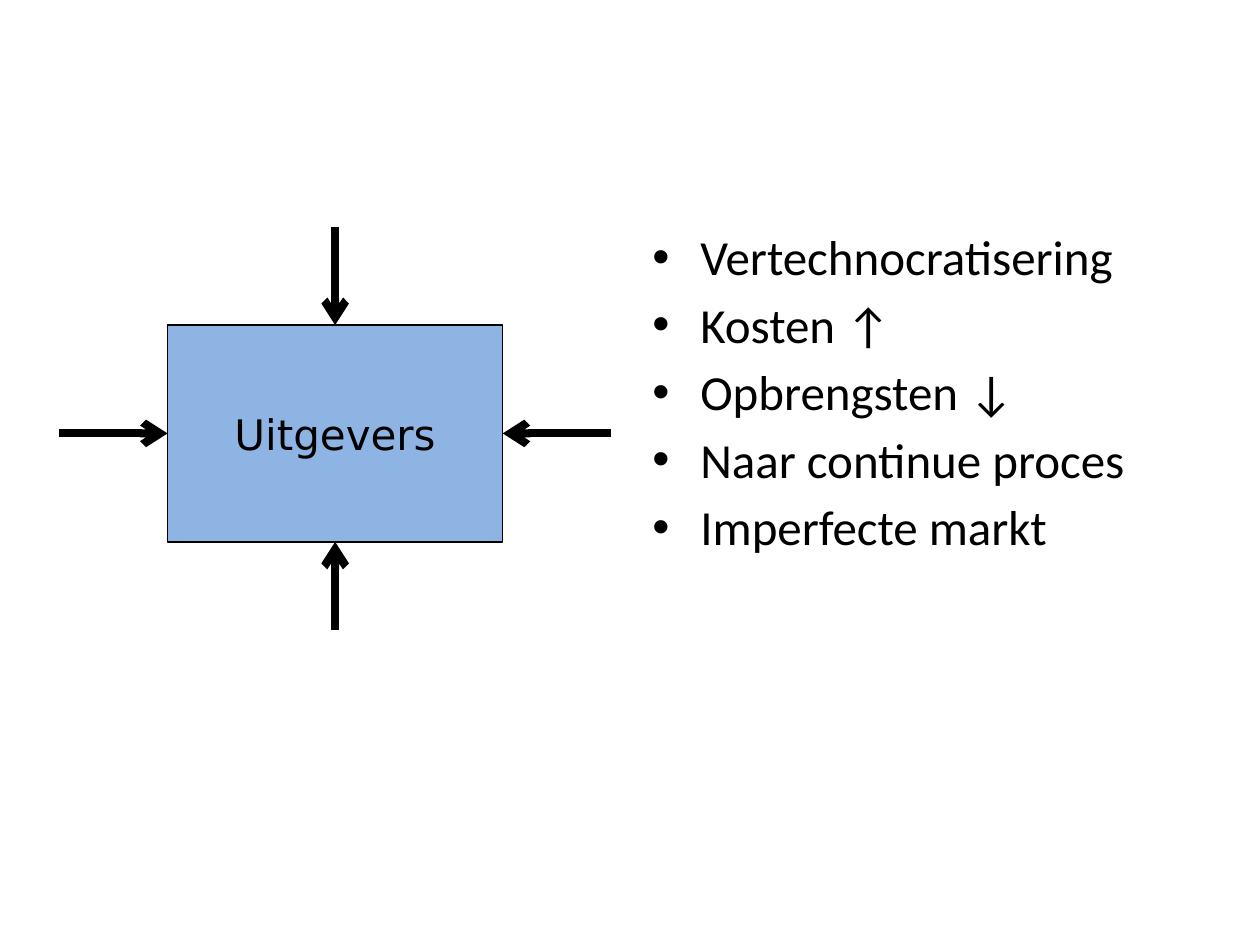
from lxml.etree import SubElement
from pptx import Presentation
from pptx.dml.color import RGBColor
from pptx.enum.shapes import MSO_CONNECTOR, MSO_SHAPE
from pptx.enum.text import MSO_ANCHOR, PP_ALIGN
from pptx.oxml.ns import qn
from pptx.util import Inches, Pt

COLORS = {"text": "000000", "line": "000000", "box": "8EB4E3"}
TRENDS = [
    "Vertechnocratisering",
    "Kosten ↑",
    "Opbrengsten ↓",
    "Naar continue proces",
    "Imperfecte markt",
]


def color(name):
    return RGBColor.from_string(COLORS[name])


def add_text(paragraph, text, font_name, size):
    run = paragraph.add_run()
    run.text = text
    run.font.name = font_name
    run.font.size = Pt(size)
    run.font.color.rgb = color("text")


def add_arrow(slide, start_x, start_y, target, site):
    """Draw an arrow from a point to a connection site of the target."""
    arrow = slide.shapes.add_connector(
        MSO_CONNECTOR.STRAIGHT, start_x, start_y, start_x, start_y)
    arrow.end_connect(target, site)
    arrow.line.color.rgb = color("line")
    arrow.line.width = Pt(4.5)
    line = arrow.line._get_or_add_ln()
    SubElement(line, qn("a:tailEnd"), type="arrow")
    SubElement(arrow._element.spPr, qn("a:effectLst"))


def add_pressure_diagram(slide, left, top, width, height):
    """Place the publishers box with an arrow pressing on each side."""
    box = slide.shapes.add_shape(MSO_SHAPE.RECTANGLE, left, top, width, height)
    box.shadow.inherit = False
    box.fill.solid()
    box.fill.fore_color.rgb = color("box")
    box.line.color.rgb = color("line")
    box.line.width = Pt(1)
    box.text_frame.vertical_anchor = MSO_ANCHOR.MIDDLE
    paragraph = box.text_frame.paragraphs[0]
    paragraph.alignment = PP_ALIGN.CENTER
    add_text(paragraph, "Uitgevers", "DejaVu Sans", 24)

    center_x, center_y = left + width // 2, top + height // 2
    side_length = Inches(0.86)
    starts = [
        (center_x, top - Inches(0.78)),
        (left - side_length, center_y),
        (center_x, top + height + Inches(0.7)),
        (left + width + side_length, center_y),
    ]
    for site, (start_x, start_y) in enumerate(starts):
        add_arrow(slide, start_x, start_y, box, site)


def add_bullet_list(slide, left, top, width, height, items):
    frame = slide.shapes.add_textbox(left, top, width, height).text_frame
    frame.word_wrap = True
    indent = Inches(0.38)
    for index, item in enumerate(items):
        paragraph = frame.add_paragraph() if index else frame.paragraphs[0]
        paragraph.space_before = Pt(5)
        properties = paragraph._p.get_or_add_pPr()
        properties.set("marL", str(indent))
        properties.set("indent", str(-indent))
        SubElement(properties, qn("a:buFont"), typeface="Arial")
        SubElement(properties, qn("a:buChar"), char="•")
        add_text(paragraph, item, "Calibri", 28)


def main():
    presentation = Presentation()
    presentation.slide_width = Inches(10)
    presentation.slide_height = Inches(7.5)
    slide = presentation.slides.add_slide(presentation.slide_layouts[6])
    add_bullet_list(slide, Inches(5.08), Inches(1.75),
                    Inches(4.42), Inches(4.95), TRENDS)
    add_pressure_diagram(slide, Inches(1.33), Inches(2.58),
                         Inches(2.66), Inches(1.72))
    presentation.save("out.pptx")


if __name__ == "__main__":
    main()
